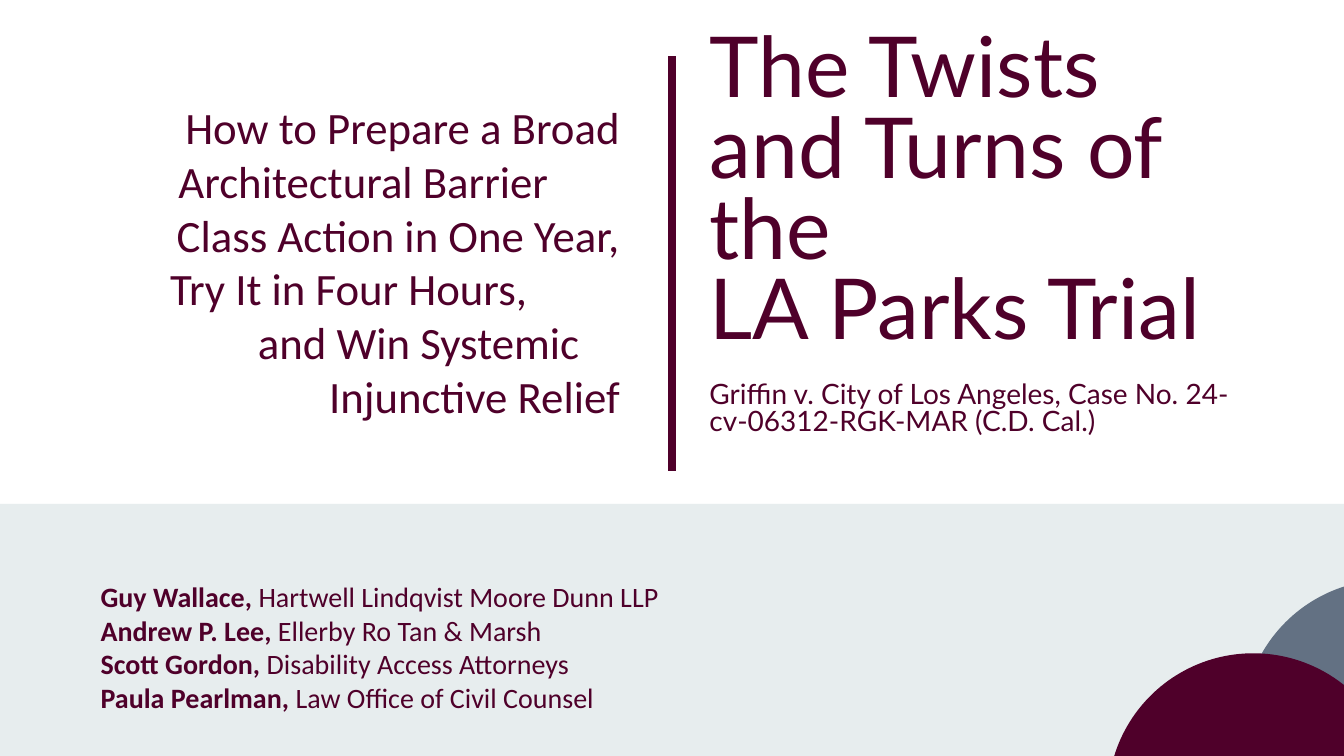
from pptx import Presentation
from pptx.dml.color import RGBColor
from pptx.enum.shapes import MSO_CONNECTOR as CONN, MSO_SHAPE as SHAPE
from pptx.enum.text import MSO_ANCHOR as ANCHOR, PP_ALIGN as ALIGN
from pptx.oxml.ns import qn
from pptx.util import Pt
from lxml import etree

WINE = RGBColor(0x4F, 0x00, 0x2A)
SLATE = RGBColor(0x63, 0x71, 0x83)
MIST = RGBColor(0xE7, 0xED, 0xEE)
WIDTH, HEIGHT, BAND_TOP = 960, 540, 360

SUBTITLE = [
    ("How to Prepare a Broad", 0),
    ("Architectural Barrier", 51),
    ("Class Action in One Year,", 0),
    ("Try It in Four Hours,", 66),
    ("and Win Systemic", 29),
    ("Injunctive Relief", 0),
]
SPEAKERS = [
    ("Guy Wallace, ", "Hartwell Lindqvist Moore Dunn LLP"),
    ("Andrew P. Lee, ", "Ellerby Ro Tan & Marsh"),
    ("Scott Gordon, ", "Disability Access Attorneys"),
    ("Paula Pearlman, ", "Law Office of Civil Counsel"),
]


def add_text(s, box, paragraphs, size, font="Calibri", align=ALIGN.LEFT,
             anchor=ANCHOR.TOP, spacing=None):
    tf = s.shapes.add_textbox(*map(Pt, box)).text_frame
    tf.word_wrap = True
    tf.vertical_anchor = anchor
    for i, runs in enumerate(paragraphs):
        p = tf.paragraphs[0] if i == 0 else tf.add_paragraph()
        p.alignment = align
        if spacing:
            p.line_spacing = spacing
        for text, bold in runs:
            for j, part in enumerate(text.split("\n")):
                if j:
                    p.add_line_break()
                r = p.add_run()
                r.text = part
                f = r.font
                f.name, f.size, f.bold = font, Pt(size), bold
                f.color.rgb = WINE
    return tf


def add_filled(s, kind, box, color):
    sp = s.shapes.add_shape(kind, *map(Pt, box))
    sp.shadow.inherit = False
    sp.fill.solid()
    sp.fill.fore_color.rgb = color
    sp.line.fill.background()


def add_subtitle(s, left, top, width, height):
    tf = add_text(s, (left, top, width, height),
                  [[(text, False)] for text, _ in SUBTITLE],
                  32, align=ALIGN.RIGHT, spacing=Pt(38.4))
    for p, (_, indent) in zip(tf.paragraphs, SUBTITLE):
        p._p.get_or_add_pPr().set("marR", str(Pt(indent)))


def add_divider(s, x, top, bottom):
    line = s.shapes.add_connector(CONN.STRAIGHT, Pt(x), Pt(top), Pt(x), Pt(bottom))
    line.line.color.rgb = WINE
    line.line.width = Pt(6)
    line.line._ln.set("cap", "sq")
    etree.SubElement(line._element.spPr, qn("a:effectLst"))


def add_title(s, left, top, width, height):
    add_text(s, (left, top, width, height),
             [[("The Twists and Turns of the\nLA Parks Trial", False)]],
             60, font="Lato", anchor=ANCHOR.BOTTOM, spacing=0.8)
    add_text(s, (left, top + 165.6, width + 39, 51),
             [[("Griffin v. City of Los Angeles, Case No. "
                "24-cv-06312-RGK-MAR (C.D. Cal.)", False)]],
             20, font="Lato", spacing=0.8)


def add_speaker_band(s, left, top, width, height):
    add_filled(s, SHAPE.RECTANGLE, (left, top, width, height), MIST)
    tf = add_text(s, (left + 64.8, top + 50.4, 415.4, 104.4),
                  [[(name, True), (firm, False)] for name, firm in SPEAKERS],
                  20, align=ALIGN.JUSTIFY)
    tf.paragraphs[0].alignment = ALIGN.LEFT
    right = left + width
    for dx, dy, color in ((-72.2, 54, SLATE), (-168.7, 106.6, WINE)):
        add_filled(s, SHAPE.OVAL, (right + dx, top + dy, 207.8, 207.8), color)


def main():
    prs = Presentation()
    prs.slide_width, prs.slide_height = Pt(WIDTH), Pt(HEIGHT)
    s = prs.slides.add_slide(prs.slide_layouts[6])
    add_speaker_band(s, 0, BAND_TOP, WIDTH, HEIGHT - BAND_TOP)
    add_subtitle(s, 111.6, 67.7, 338.4, 177.8)
    add_divider(s, WIDTH / 2, 43.2, 333.4)
    add_title(s, 499.7, 104.4, 402.5, 153.4)
    prs.save("out.pptx")


if __name__ == "__main__":
    main()
